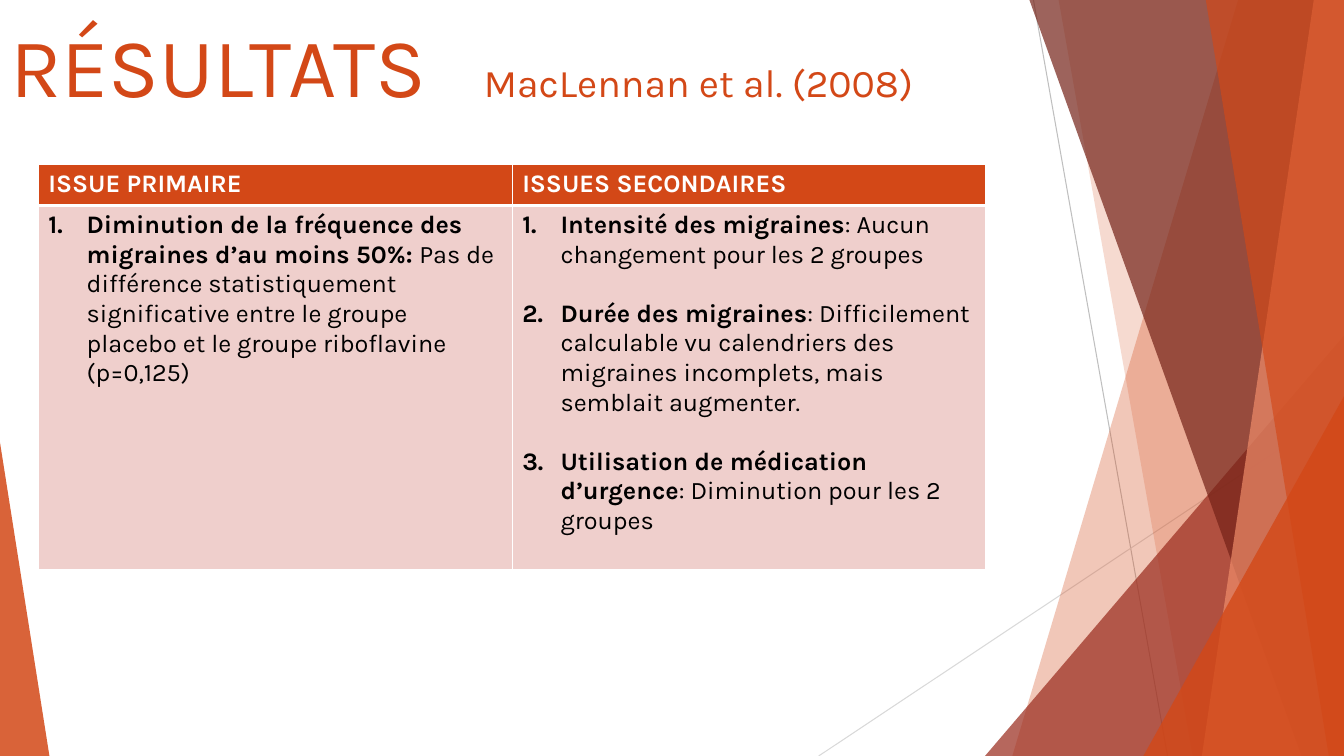
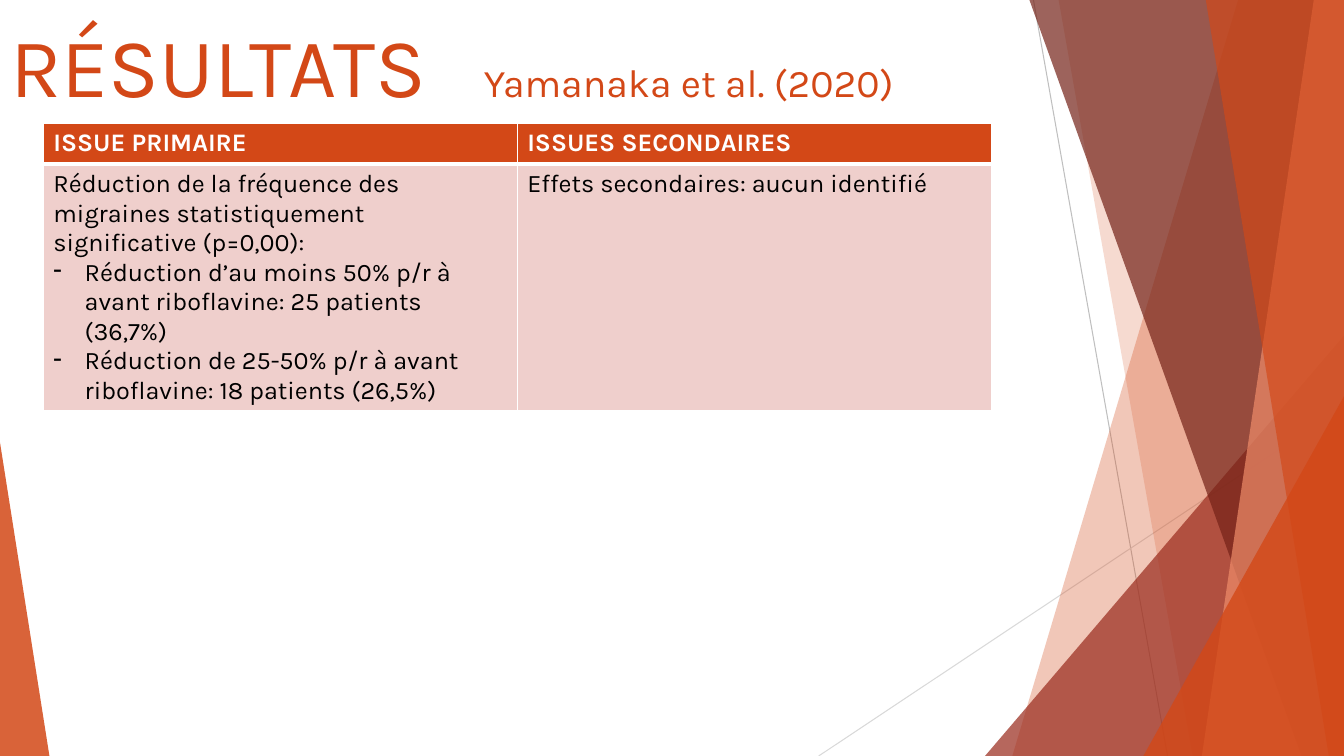
from lxml import etree
from pptx import Presentation
from pptx.dml.color import RGBColor
from pptx.enum import shapes, text
from pptx.oxml.ns import qn
from pptx.util import Inches, Pt

FONT = "Karla"
ORANGE = RGBColor(0xD3, 0x48, 0x17)
SALMON = RGBColor(0xEF, 0x8C, 0x6A)
RED = RGBColor(0x9B, 0x2D, 0x1F)
DARK_RED = RGBColor(0x74, 0x22, 0x17)
PINK = RGBColor(0xEF, 0xCF, 0xCC)
GRAY = RGBColor(0xBF, 0xBF, 0xBF)
LIGHT_GRAY = RGBColor(0xD9, 0xD9, 0xD9)
WHITE = RGBColor(0xFF, 0xFF, 0xFF)
BLACK = RGBColor(0x00, 0x00, 0x00)

WIDTH, HEIGHT = 13.33, 7.5
COLUMN_WIDTH = 4.7
HEADER_HEIGHT = 0.41
HEADERS = ("ISSUE PRIMAIRE", "ISSUES SECONDAIRES")
INDENTS = {"number": 0.38, "dash": 0.31}
BLANK_LINE = 21

MACLENNAN = [
    [("number", [
        ("Diminution de la fréquence des migraines d’au moins 50%: ", True),
        ("Pas de différence statistiquement significative entre le groupe "
         "placebo et le groupe riboflavine (p=0,125)", False)])],
    [("number", [("Intensité des migraines", True),
                 (": Aucun changement pour les 2 groupes", False)]),
     ("number", [("Durée des migraines", True),
                 (": Difficilement calculable vu calendriers des migraines "
                  "incomplets, mais semblait augmenter.", False)]),
     ("number", [("Utilisation de médication d’urgence", True),
                 (": Diminution pour les 2 groupes", False)])],
]
YAMANAKA = [
    [(None, [("Réduction de la fréquence des migraines statistiquement "
              "significative (p=0,00):", False)]),
     ("dash", [("Réduction d’au moins 50% p/r à avant riboflavine: "
                "25 patients (36,7%)", False)]),
     ("dash", [("Réduction de 25-50% p/r à avant riboflavine: "
                "18 patients (26,5%)", False)])],
    [(None, [("Effets secondaires: aucun identifié", False)])],
]


def paint(shape, color, opacity):
    shape.shadow.inherit = False
    shape.line.fill.background()
    shape.fill.solid()
    shape.fill.fore_color.rgb = color
    srgb = shape.element.spPr.find(".//" + qn("a:srgbClr"))
    etree.SubElement(srgb, qn("a:alpha"), val=str(opacity * 1000))
    return shape


def add_line(slide, start, end, color):
    line = slide.shapes.add_connector(
        shapes.MSO_CONNECTOR.STRAIGHT, *map(Inches, start + end))
    line.line.color.rgb = color
    line.line.width = Pt(0.75)
    etree.SubElement(line.element.spPr, qn("a:effectLst"))
    return line


def add_strip(slide, top_x, bottom_x, color, opacity):
    corners = [(WIDTH, 0), (WIDTH, HEIGHT), (bottom_x, HEIGHT)]
    builder = slide.shapes.build_freeform(Inches(top_x), 0)
    builder.add_line_segments([(Inches(x), Inches(y)) for x, y in corners])
    return paint(builder.convert_to_shape(), color, opacity)


def add_corner(slide, left, top, width, apex, color, opacity):
    triangle = slide.shapes.add_shape(
        shapes.MSO_SHAPE.ISOSCELES_TRIANGLE, Inches(left), Inches(top),
        Inches(width), Inches(HEIGHT - top))
    triangle.adjustments[0] = apex
    return paint(triangle, color, opacity)


def decorate_layout(layout, slide):
    decorations = [
        add_line(slide, (10.25, 0), (11.58, HEIGHT), GRAY),
        add_line(slide, (WIDTH, 4.03), (8.12, HEIGHT), LIGHT_GRAY),
        add_strip(slide, 12.28, 10.04, ORANGE, 30),
        add_strip(slide, 10.5, 11.83, ORANGE, 20),
        add_corner(slide, 9.77, 3.33, 3.56, 1, RED, 72),
        add_strip(slide, 10.21, 12.91, DARK_RED, 70),
        add_strip(slide, 13.03, 11.92, SALMON, 70),
        add_strip(slide, 11.96, 13.18, ORANGE, 65),
        add_corner(slide, 11.34, 3.93, 1.99, 1, ORANGE, 80),
        add_corner(slide, 0, 4.39, 0.49, 0, ORANGE, 85),
    ]
    for position, shape in enumerate(decorations, start=2):
        layout.shapes.element.insert(position, shape.element)


def add_run(paragraph, content, size=None, bold=None):
    run = paragraph.add_run()
    run.text = content
    run.font.size = size
    run.font.bold = bold


def set_font(paragraph, color, size=None):
    paragraph.font.name = FONT
    paragraph.font.color.rgb = color
    paragraph.font.size = size


def set_title(slide, study):
    title = slide.shapes.title
    title.left, title.top = 0, 0
    title.width, title.height = Inches(9.4), Inches(1.44)
    frame = title.text_frame
    frame.word_wrap = True
    frame.auto_size = text.MSO_AUTO_SIZE.NONE
    frame.vertical_anchor = text.MSO_ANCHOR.TOP
    frame.margin_top = Inches(0.13)
    paragraph = frame.paragraphs[0]
    paragraph.alignment = text.PP_ALIGN.LEFT
    properties = paragraph._p.get_or_add_pPr()
    tabs = etree.SubElement(properties, qn("a:tabLst"))
    etree.SubElement(tabs, qn("a:tab"), pos=str(Inches(4.7)), algn="l")
    set_font(paragraph, ORANGE)
    add_run(paragraph, "RÉSULTATS", Pt(60))
    add_run(paragraph, "\t" + study, Pt(28))


def set_marker(paragraph, marker):
    properties = paragraph._p.get_or_add_pPr()
    indent = Inches(INDENTS[marker])
    properties.set("marL", str(indent))
    properties.set("indent", str(-indent))
    if marker == "number":
        etree.SubElement(properties, qn("a:buAutoNum"), type="arabicPeriod")
    else:
        etree.SubElement(properties, qn("a:buChar"), char="-")


def style_cell(cell, color, top, bottom):
    properties = cell._tc.get_or_add_tcPr()
    for side, width in (("L", 1), ("R", 1), ("T", top), ("B", bottom)):
        border = etree.SubElement(properties, qn("a:ln" + side), w=str(Pt(width)))
        fill = etree.SubElement(border, qn("a:solidFill"))
        etree.SubElement(fill, qn("a:srgbClr"), val=str(WHITE))
    cell.fill.solid()
    cell.fill.fore_color.rgb = color


def fill_cell(cell, items, color):
    frame = cell.text_frame
    for index, (marker, runs) in enumerate(items):
        paragraph = frame.add_paragraph() if index else frame.paragraphs[0]
        if marker:
            set_marker(paragraph, marker)
        if marker == "number" and index < len(items) - 1:
            paragraph.space_after = Pt(BLANK_LINE)
        set_font(paragraph, color, Pt(18))
        for content, bold in runs:
            add_run(paragraph, content, bold=bold)


def add_results_table(slide, left, top, body_height, columns):
    table = slide.shapes.add_table(
        2, len(columns), Inches(left), Inches(top),
        Inches(COLUMN_WIDTH * len(columns)),
        Inches(HEADER_HEIGHT + body_height)).table
    table.horz_banding = False
    table.rows[0].height = Inches(HEADER_HEIGHT)
    table.rows[1].height = Inches(body_height)
    for index, (header, items) in enumerate(zip(HEADERS, columns)):
        table.columns[index].width = Inches(COLUMN_WIDTH)
        header_cell, body_cell = table.cell(0, index), table.cell(1, index)
        style_cell(header_cell, ORANGE, 1, 3)
        style_cell(body_cell, PINK, 3, 1)
        fill_cell(header_cell, [(None, [(header, True)])], WHITE)
        fill_cell(body_cell, items, BLACK)


def main():
    presentation = Presentation()
    presentation.slide_width = Inches(WIDTH)
    presentation.slide_height = Inches(HEIGHT)
    layout = presentation.slide_layouts[5]
    results = [
        ("MacLennan et al. (2008)", 0.38, 1.63, 3.61, MACLENNAN),
        ("Yamanaka et al. (2020)", 0.43, 1.22, 2.44, YAMANAKA),
    ]
    for index, (study, left, top, body_height, columns) in enumerate(results):
        slide = presentation.slides.add_slide(layout)
        if index == 0:
            decorate_layout(layout, slide)
        set_title(slide, study)
        add_results_table(slide, left, top, body_height, columns)
    presentation.save("out.pptx")


if __name__ == "__main__":
    main()
